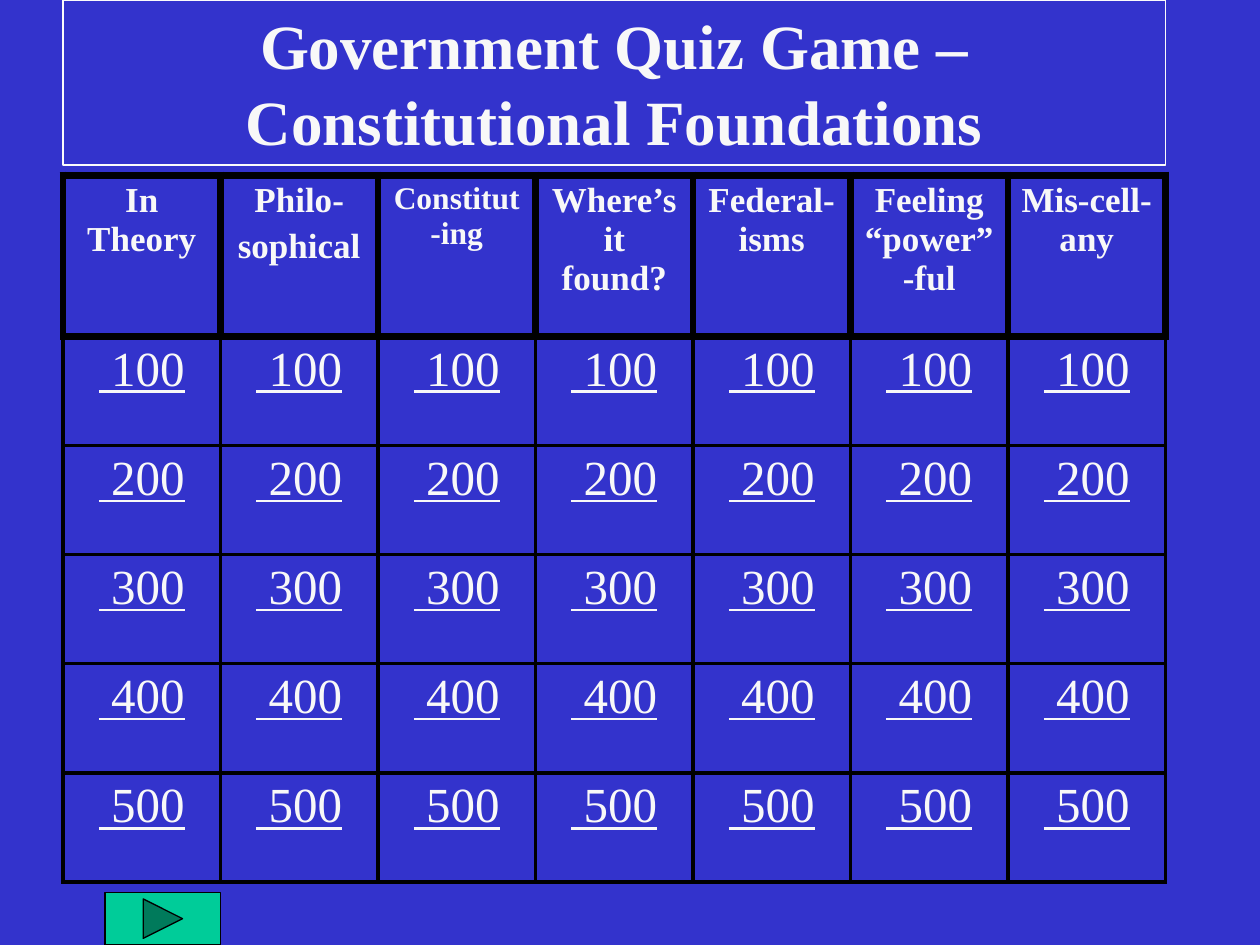
from lxml import etree
from pptx import Presentation
from pptx import util as u
from pptx.dml.color import RGBColor
from pptx.enum import shapes, text
from pptx.oxml.ns import qn

COLORS = {"back": "3333CC", "text": "F8F8F8", "frame": "FBFBFB",
          "grid": "000000", "button": "00CC99"}
FONT = "Times New Roman"
HEADS = ["In Theory", "Philo-\nsophical", "Constitut-ing", "Where’s it found?",
         "Federal-isms", "Feeling “power”-ful", "Mis-cell-any"]
POINTS = [100, 200, 300, 400, 500]
HEAD_TALL = 3.25


def color(name):
    return RGBColor.from_string(COLORS[name])


def write(frame, words, size, bold=False, under=False):
    """Fill a text frame with centred text, one paragraph per line."""
    frame.word_wrap = True
    for i, line in enumerate(words.split("\n")):
        para = frame.add_paragraph() if i else frame.paragraphs[0]
        para.alignment = text.PP_ALIGN.CENTER
        if i:
            para.space_before = u.Pt(size * 0.2)
        run = para.add_run()
        run.text = line
        font = run.font
        font.name, font.size = FONT, u.Pt(size)
        font.bold, font.underline = bold, under
        font.color.rgb = color("text")


def edge(cell, **widths):
    """Draw cell borders; keys are the sides L, R, T, B and values are points."""
    props = cell._tc.get_or_add_tcPr()
    for side in "LRTB":
        line = etree.SubElement(props, qn(f"a:ln{side}"), w=str(u.Pt(widths[side])))
        fill = etree.SubElement(line, qn("a:solidFill"))
        etree.SubElement(fill, qn("a:srgbClr"), val=COLORS["grid"])


def add_box(slide, kind, box, line):
    shape = slide.shapes.add_shape(kind, *map(u.Cm, box))
    shape.shadow.inherit = False
    shape.line.color.rgb = color(line)
    shape.line.width = u.Pt(0.75)
    return shape


def add_title(slide, box):
    shape = add_box(slide, shapes.MSO_SHAPE.RECTANGLE, box, "frame")
    shape.fill.background()
    frame = shape.text_frame
    frame.vertical_anchor = text.MSO_ANCHOR.MIDDLE
    write(frame, "Government Quiz Game – Constitutional Foundations", 36, bold=True)


def add_board(slide, box):
    rows = [HEADS] + [[f" {n}" for _ in HEADS] for n in POINTS]
    table = slide.shapes.add_table(len(rows), len(HEADS), *map(u.Cm, box)).table
    table.first_row = table.horz_banding = False
    wide, tall = box[2:]
    for col in table.columns:
        col.width = u.Cm(wide / len(HEADS))
    for r, row in enumerate(rows):
        head = r == 0
        table.rows[r].height = u.Cm(HEAD_TALL if head else (tall - HEAD_TALL) / len(POINTS))
        thick = 4.5 if head else 2.25
        for c, words in enumerate(row):
            cell = table.cell(r, c)
            edge(cell, L=thick, R=thick, T=4.5 if r < 2 else thick, B=thick)
            cell.fill.background()
            size = (18 if words == "Constitut-ing" else 20) if head else 28
            write(cell.text_frame, words, size, bold=head, under=not head)


def add_button(slide, box):
    shape = add_box(slide, shapes.MSO_SHAPE.ACTION_BUTTON_FORWARD_OR_NEXT, box, "grid")
    shape.fill.solid()
    shape.fill.fore_color.rgb = color("button")


def main():
    deck = Presentation()
    deck.slide_width, deck.slide_height = u.Cm(25.4), u.Cm(19.05)
    slide = deck.slides.add_slide(deck.slide_layouts[6])
    back = slide.background.fill
    back.solid()
    back.fore_color.rgb = color("back")
    left, wide = 1.27, 22.23
    add_board(slide, (left, 3.53, wide, 14.25))
    add_button(slide, (2.12, 17.99, 2.33, 1.06))
    add_title(slide, (left, 0, wide, 3.33))
    deck.save("out.pptx")


if __name__ == "__main__":
    main()
